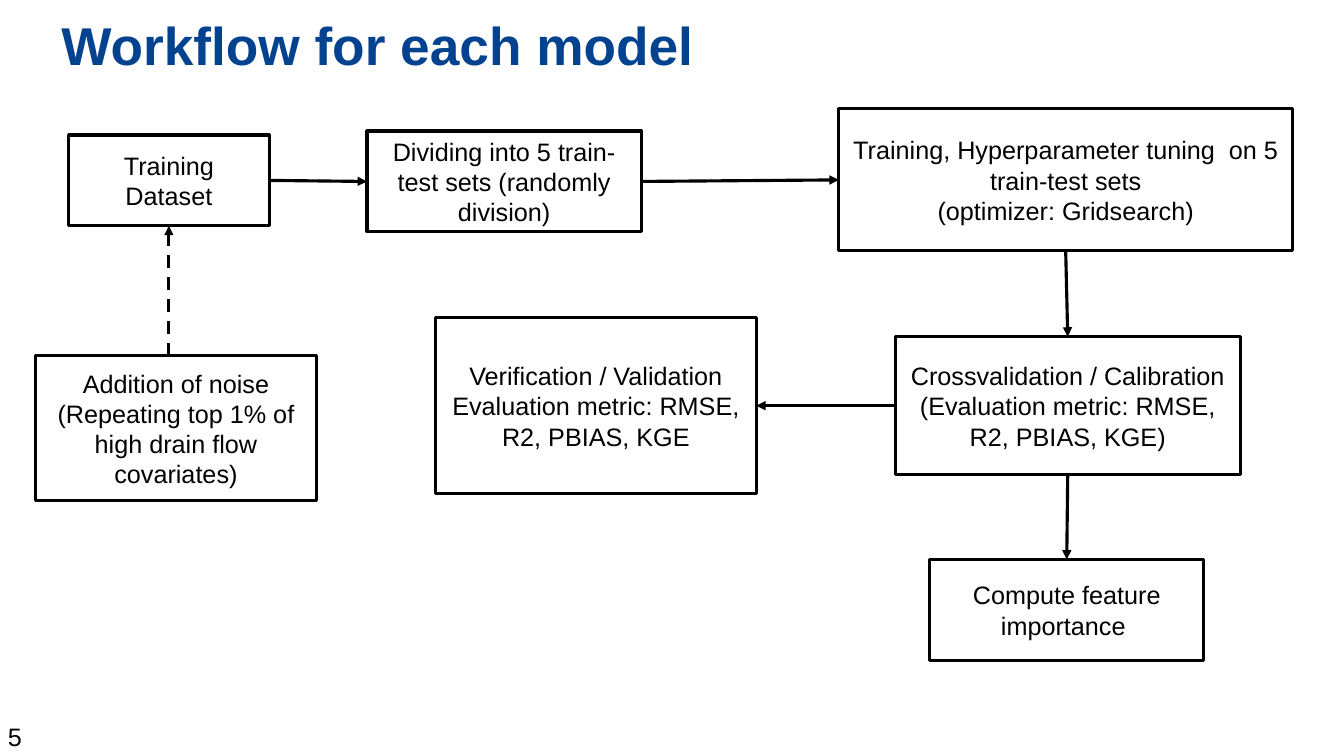
import pptx
import pptx.util
import pptx.dml.color
import pptx.enum.dml
import pptx.enum.shapes
import pptx.enum.text
import pptx.oxml.ns
from lxml import etree
from pptx.util import Inches

# Content: name -> (left, top, width, height), paragraphs
TITLE = ("Workflow for each model", (0.51, 0.07, 11.5, 1.45))
PAGE_NUMBER = ("5", (-0.02, 7.11, 0.51, 0.4))
STEPS = {
    "dataset": ((0.68, 1.34, 1.99, 0.9), ["Training Dataset"]),
    "division": ((3.64, 1.3, 2.72, 1), ["Dividing into 5 train-test sets (randomly division)"]),
    "tuning": ((8.32, 1.08, 4.5, 1.41), [
        "Training, Hyperparameter tuning  on 5 train-test sets",
        "(optimizer: Gridsearch)"]),
    "calibration": ((8.88, 3.34, 3.42, 1.37), [
        "Crossvalidation / Calibration",
        "(Evaluation metric: RMSE, R2, PBIAS, KGE)"]),
    "noise": ((0.35, 3.53, 2.79, 1.44), [
        "Addition of noise (Repeating top 1% of high drain flow covariates)"]),
    "importance": ((9.22, 5.55, 2.72, 1), ["Compute feature importance "]),
    "verification": ((4.32, 3.15, 3.18, 1.75), [
        "Verification / Validation",
        "Evaluation metric: RMSE, R2, PBIAS, KGE"]),
}
TOP, LEFT, BOTTOM, RIGHT = range(4)
ARROWS = [  # start step, start side, end step, end side
    ("dataset", RIGHT, "division", LEFT),
    ("division", RIGHT, "tuning", LEFT),
    ("tuning", BOTTOM, "calibration", TOP),
    ("calibration", BOTTOM, "importance", TOP),
    ("calibration", LEFT, "verification", RIGHT),
]

RGB = pptx.dml.color.RGBColor.from_string
THEME = {
    "ink": RGB("000000"),
    "paper": RGB("FFFFFF"),
    "line_width": pptx.util.Pt(2.25),
    "title": {"name": "Arial", "size": pptx.util.Pt(38), "bold": True},
    "title_color": RGB("03428E"),
    "body": {"name": "Arial", "size": pptx.util.Pt(18)},
}
ALIGN = pptx.enum.text.PP_ALIGN
ANCHOR = pptx.enum.text.MSO_ANCHOR


def write_text(shape, lines, font_format, color, align, frame_format):
    frame = shape.text_frame
    for name, value in frame_format.items():
        setattr(frame, name, value)
    frame.text = "\n".join(lines)
    for paragraph in frame.paragraphs:
        paragraph.alignment = align
        for name, value in font_format.items():
            setattr(paragraph.font, name, value)
        paragraph.font.color.rgb = color


def style_line(line):
    line.color.rgb = THEME["ink"]
    line.width = THEME["line_width"]


def add_step(slide, box, lines):
    shape = slide.shapes.add_shape(
        pptx.enum.shapes.MSO_SHAPE.RECTANGLE, *map(Inches, box))
    shape.shadow.inherit = False
    shape.fill.solid()
    shape.fill.fore_color.rgb = THEME["paper"]
    style_line(shape.line)
    write_text(shape, lines, THEME["body"], THEME["ink"], ALIGN.CENTER,
               {"word_wrap": True, "vertical_anchor": ANCHOR.MIDDLE})
    return shape


def add_arrow(slide, x=0, y=0):
    arrow = slide.shapes.add_connector(
        pptx.enum.shapes.MSO_CONNECTOR.STRAIGHT, x, y, x, y)
    style_line(arrow.line)
    qn = pptx.oxml.ns.qn
    etree.SubElement(arrow.line._get_or_add_ln(), qn("a:tailEnd"), type="triangle")
    etree.SubElement(arrow._element.spPr, qn("a:effectLst"))
    return arrow


def main():
    presentation = pptx.Presentation()
    presentation.slide_width = Inches(13.33)
    presentation.slide_height = Inches(7.5)
    slide = presentation.slides.add_slide(presentation.slide_layouts[6])

    # Page number
    text, box = PAGE_NUMBER
    number = slide.shapes.add_textbox(*map(Inches, box))
    write_text(number, [text], THEME["body"], THEME["ink"], ALIGN.LEFT,
               {"word_wrap": False})

    # Steps and the arrows between them
    steps = {name: add_step(slide, box, lines) for name, (box, lines) in STEPS.items()}
    for start, start_side, end, end_side in ARROWS:
        arrow = add_arrow(slide)
        arrow.begin_connect(steps[start], start_side)
        arrow.end_connect(steps[end], end_side)

    # Dashed arrow rises straight from the noise step to the dataset
    dataset = steps["dataset"]
    dashed = add_arrow(slide, dataset.left + dataset.width // 2, steps["noise"].top)
    dashed.line.dash_style = pptx.enum.dml.MSO_LINE.DASH
    dashed.end_connect(dataset, BOTTOM)

    # Title
    text, box = TITLE
    title = slide.shapes.add_textbox(*map(Inches, box))
    write_text(title, [text], THEME["title"], THEME["title_color"], ALIGN.LEFT,
               {"word_wrap": True, "vertical_anchor": ANCHOR.TOP})

    presentation.save("out.pptx")


if __name__ == "__main__":
    main()
